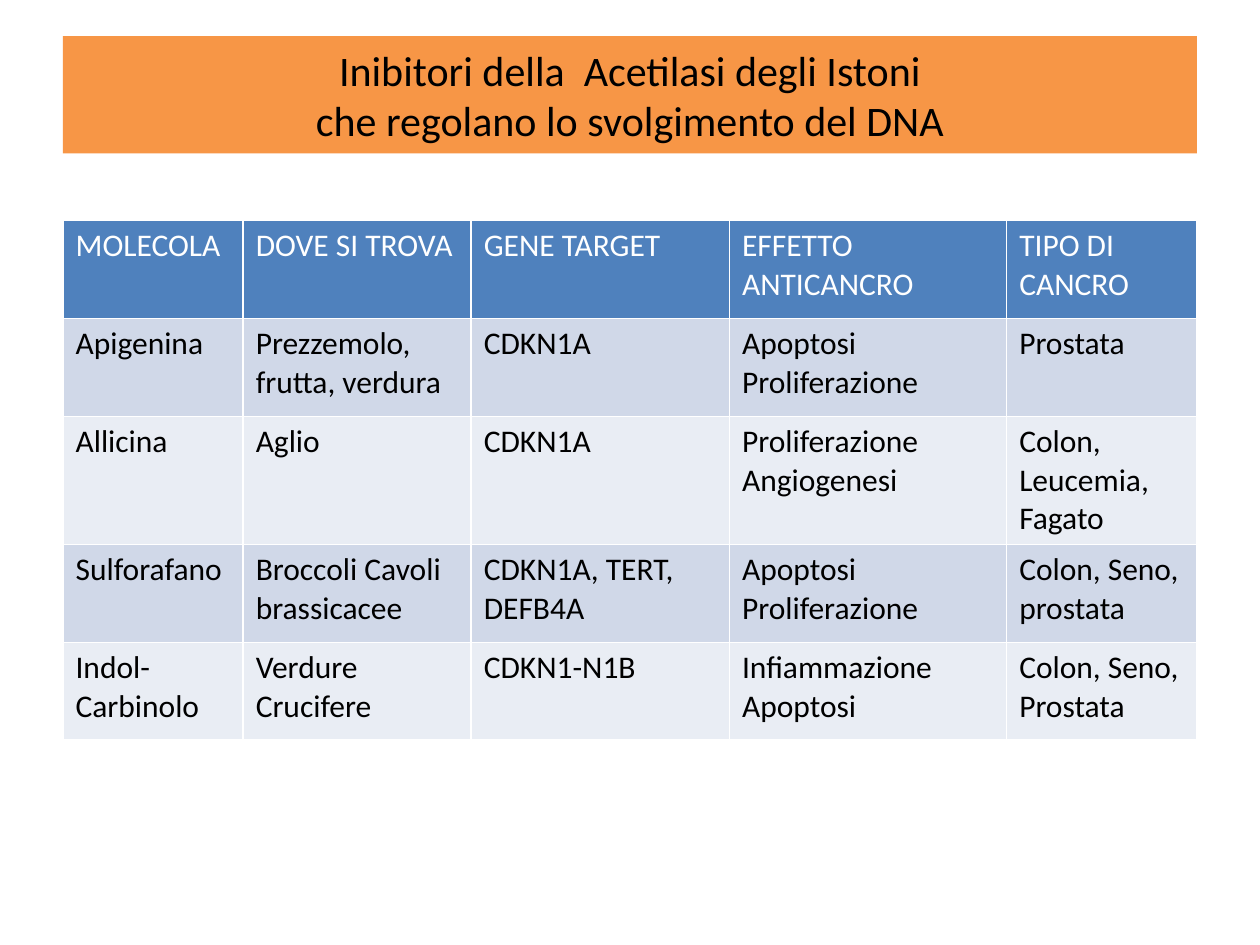
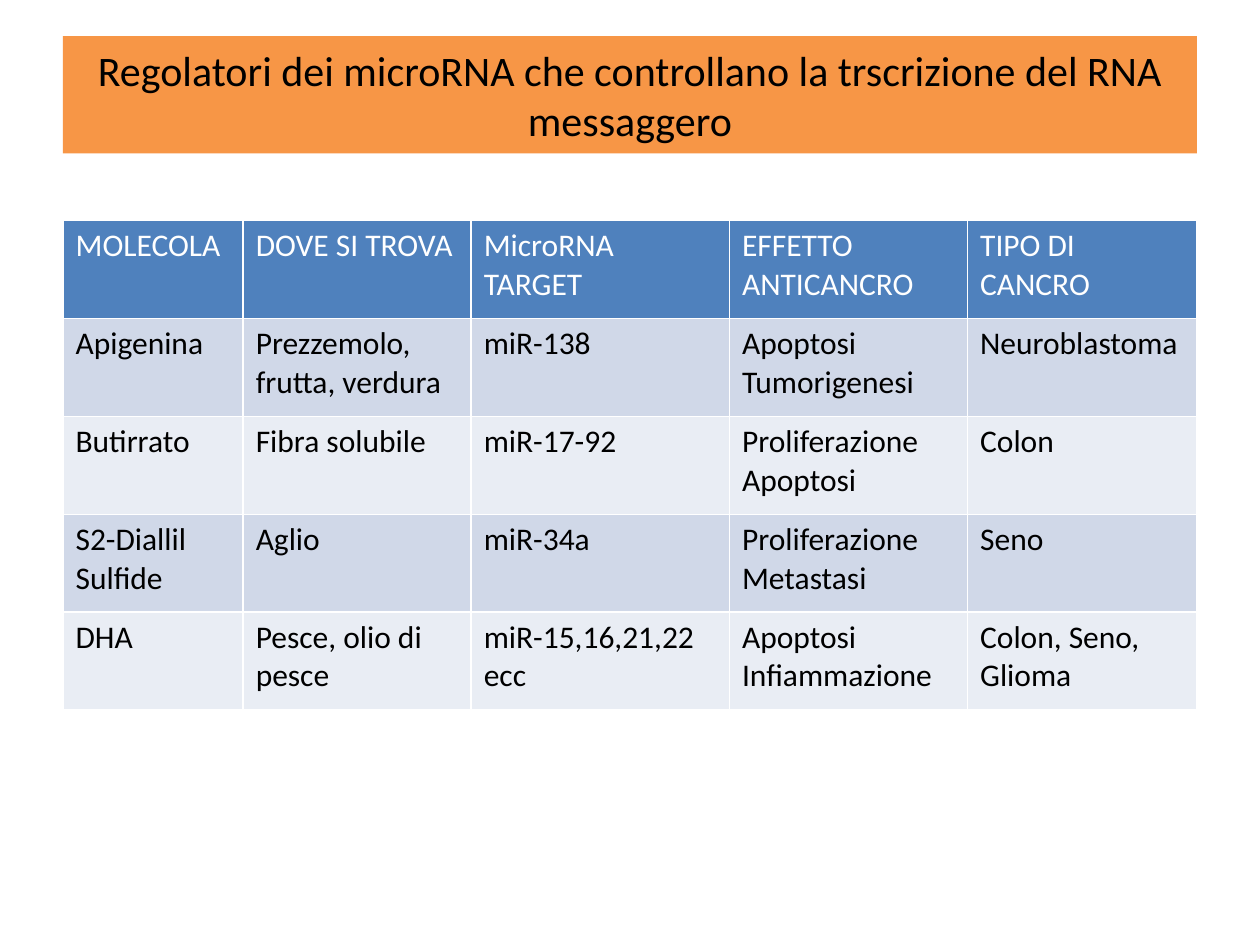
from dataclasses import dataclass

from lxml import etree
from pptx import Presentation
from pptx import util as u
from pptx.dml import color
from pptx.enum import shapes, text
from pptx.oxml import ns


@dataclass(frozen=True)
class Theme:
    font: str = "Calibri"
    title_size: int = 24
    table_size: int = 18
    band: str = "F79646"
    header: str = "4F81BD"
    stripes: tuple = ("E9EDF4", "D0D8E8")
    dark: str = "000000"
    light: str = "FFFFFF"
    border: int = 1


theme = Theme()


def write(frame, content, size, ink, alignment):
    paragraph = frame.paragraphs[0]
    paragraph.text = content
    paragraph.alignment = alignment
    formats = {"name": theme.font, "size": u.Pt(size), "bold": False}
    for run in paragraph.runs:
        for attribute, value in formats.items():
            setattr(run.font, attribute, value)
        run.font.color.rgb = color.RGBColor.from_string(ink)


def outline(cell):
    properties = cell._tc.get_or_add_tcPr()
    for side in ("lnL", "lnR", "lnT", "lnB"):
        line = etree.SubElement(properties, ns.qn(f"a:{side}"), w=str(u.Pt(theme.border)))
        fill = etree.SubElement(line, ns.qn("a:solidFill"))
        etree.SubElement(fill, ns.qn("a:srgbClr"), val=theme.light)


presentation = Presentation()
presentation.slide_width = u.Inches(10)
presentation.slide_height = u.Inches(7.5)

column = presentation.slide_width / 20
row = presentation.slide_height / 30
left, width = int(column), int(18 * column)
title_top, title_height = int(1.15 * row), int(3.72 * row)
table_top, table_row = int(7 * row), int(3.11 * row)

pages = [
    {
        "title": "Inibitori della  Acetilasi degli Istoni\nche regolano lo svolgimento del DNA",
        "columns": (2.86, 3.62, 4.1, 4.4, 3.02),
        "rows": [
            ("MOLECOLA", "DOVE SI TROVA", "GENE TARGET", "EFFETTO ANTICANCRO", "TIPO DI CANCRO"),
            ("Apigenina", "Prezzemolo, frutta, verdura", "CDKN1A", "Apoptosi Proliferazione", "Prostata"),
            ("Allicina", "Aglio", "CDKN1A", "Proliferazione Angiogenesi", "Colon, Leucemia, Fagato"),
            ("Sulforafano", "Broccoli Cavoli brassicacee", "CDKN1A, TERT, DEFB4A",
             "Apoptosi Proliferazione", "Colon, Seno, prostata"),
            ("Indol-Carbinolo", "Verdure Crucifere", "CDKN1-N1B", "Infiammazione Apoptosi",
             "Colon, Seno, Prostata"),
        ],
    },
    {
        "title": "Regolatori dei microRNA che controllano la trscrizione del RNA messaggero",
        "columns": (2.86, 3.62, 4.1, 3.78, 3.64),
        "rows": [
            ("MOLECOLA", "DOVE SI TROVA", "MicroRNA TARGET", "EFFETTO ANTICANCRO", "TIPO DI CANCRO"),
            ("Apigenina", "Prezzemolo, frutta, verdura", "miR-138", "Apoptosi Tumorigenesi", "Neuroblastoma"),
            ("Butirrato", "Fibra solubile", "miR-17-92", "Proliferazione Apoptosi", "Colon"),
            ("S2-Diallil Sulfide", "Aglio", "miR-34a", "Proliferazione Metastasi", "Seno"),
            ("DHA", "Pesce, olio di pesce", "miR-15,16,21,22 ecc", "Apoptosi Infiammazione",
             "Colon, Seno, Glioma"),
        ],
    },
]

for page in pages:
    slide = presentation.slides.add_slide(presentation.slide_layouts[6])

    title = slide.shapes.add_shape(
        shapes.MSO_SHAPE.RECTANGLE, left, title_top, width, title_height)
    title.shadow.inherit = False
    title.fill.solid()
    title.fill.fore_color.rgb = color.RGBColor.from_string(theme.band)
    title.line.fill.background()
    frame_formats = {"word_wrap": True, "vertical_anchor": text.MSO_ANCHOR.MIDDLE}
    for attribute, value in frame_formats.items():
        setattr(title.text_frame, attribute, value)
    write(title.text_frame, page["title"], theme.title_size, theme.dark, text.PP_ALIGN.CENTER)

    rows = page["rows"]
    table = slide.shapes.add_table(
        len(rows), len(rows[0]), left, table_top, width, table_row * len(rows)).table
    for table_column, share in zip(table.columns, page["columns"]):
        table_column.width = int(share * column)

    for row_index, entries in enumerate(rows):
        is_header = row_index == 0
        background = theme.header if is_header else theme.stripes[row_index % 2]
        ink = theme.light if is_header else theme.dark
        for column_index, entry in enumerate(entries):
            cell = table.cell(row_index, column_index)
            outline(cell)
            cell.fill.solid()
            cell.fill.fore_color.rgb = color.RGBColor.from_string(background)
            write(cell.text_frame, entry, theme.table_size, ink, text.PP_ALIGN.LEFT)

presentation.save("out.pptx")
